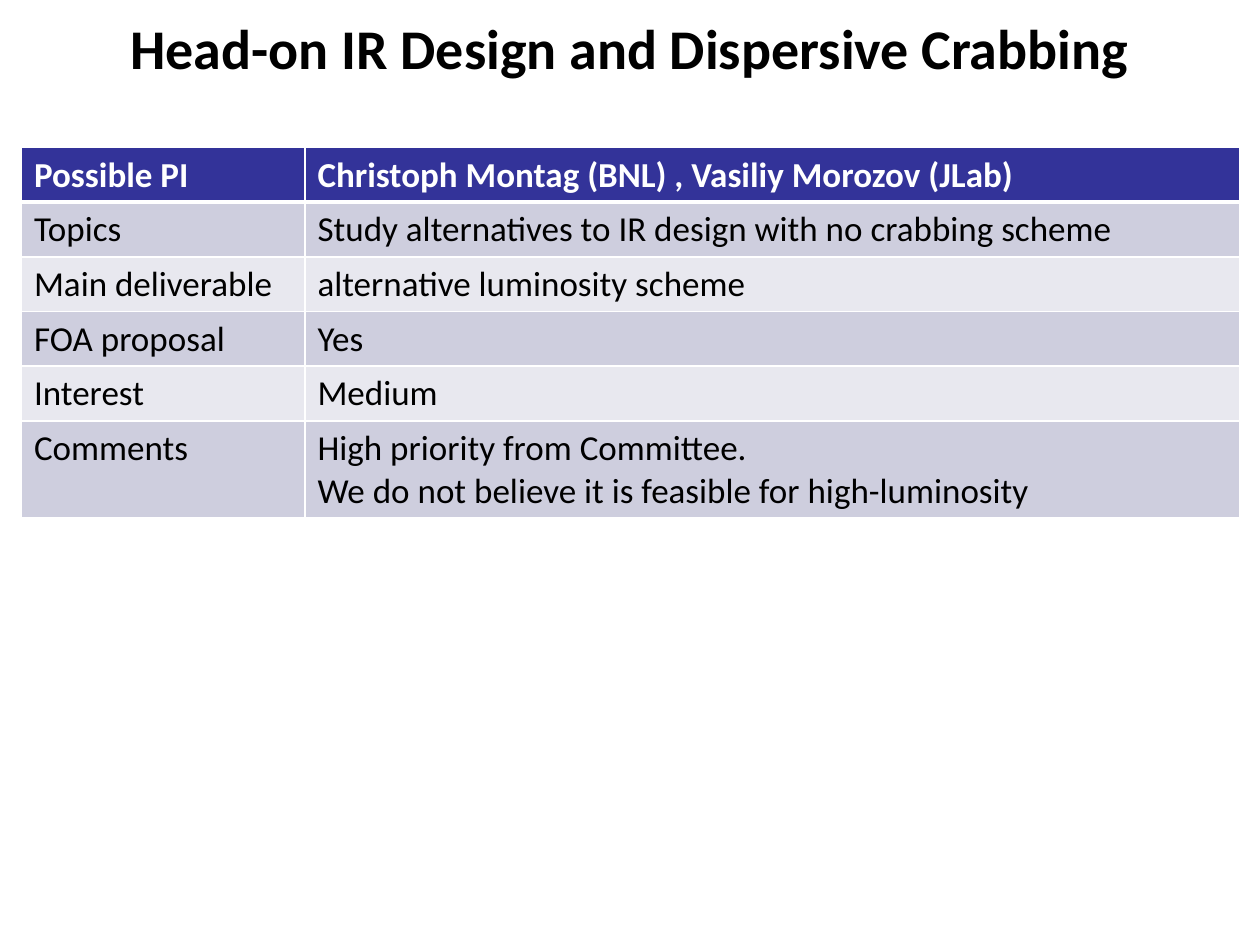
from lxml import etree
from pptx import Presentation
from pptx.dml.color import RGBColor
from pptx.enum.text import MSO_ANCHOR, PP_ALIGN
from pptx.oxml.ns import qn
from pptx.util import Inches, Pt

CENTER, LEFT = PP_ALIGN.CENTER, PP_ALIGN.LEFT
MIDDLE = MSO_ANCHOR.MIDDLE

COLORS = {
    "white": "FFFFFF",
    "black": "000000",
    "header": "333399",
    "odd": "CECEDE",
    "even": "E8E8EF",
}

PROPOSAL_ROWS = [
    ("Possible PI", ["Christoph Montag (BNL) , Vasiliy Morozov (JLab)"]),
    ("Topics", ["Study alternatives to IR design with no crabbing scheme"]),
    ("Main deliverable", ["alternative luminosity scheme"]),
    ("FOA proposal", ["Yes"]),
    ("Interest", ["Medium"]),
    ("Comments", ["High priority from Committee.",
                  "We do not believe it is feasible for high-luminosity"]),
]


class SlideBuilder:
    """Holds the style and the current slide, and draws its elements."""

    font = "Calibri"

    def __init__(self, prs):
        self.s = prs.slides.add_slide(prs.slide_layouts[6])

    def add_lines(self, tf, lines, size, color, bold=False, align=LEFT):
        for i, line in enumerate(lines):
            p = tf.paragraphs[0] if i == 0 else tf.add_paragraph()
            p.alignment = align
            r = p.add_run()
            r.text = line
            r.font.name = self.font
            r.font.size = Pt(size)
            r.font.bold = bold
            r.font.color.rgb = RGBColor.from_string(COLORS[color])

    def title(self, text, x, y, w, h):
        sp = self.s.shapes.add_textbox(Inches(x), Inches(y), Inches(w), Inches(h))
        tf = sp.text_frame
        tf.word_wrap = True
        tf.vertical_anchor = MIDDLE
        self.add_lines(tf, [text], 32, "black", True, CENTER)

    def border(self, cell, side, width):
        tc_pr = cell._tc.get_or_add_tcPr()
        ln = etree.SubElement(tc_pr, qn("a:ln" + side), w=str(Pt(width)))
        fill = etree.SubElement(ln, qn("a:solidFill"))
        etree.SubElement(fill, qn("a:srgbClr"), val=COLORS["white"])

    def cell(self, cell, lines, row):
        header = row == 0
        widths = {"L": 1, "R": 1, "T": 3 if row == 1 else 1, "B": 3 if header else 1}
        for side, width in widths.items():
            self.border(cell, side, width)
        fill = "header" if header else "odd" if row % 2 else "even"
        cell.fill.solid()
        cell.fill.fore_color.rgb = RGBColor.from_string(COLORS[fill])
        self.add_lines(cell.text_frame, lines, 20, "white" if header else "black", header)

    def table(self, rows, x, y, col_widths, line_height, extra_line):
        heights = [line_height + extra_line * (len(lines) - 1) for _, lines in rows]
        table = self.s.shapes.add_table(
            len(rows), len(col_widths), Inches(x), Inches(y),
            Inches(sum(col_widths)), Inches(sum(heights))).table
        for col, width in zip(table.columns, col_widths):
            col.width = Inches(width)
        for i, (label, lines) in enumerate(rows):
            table.rows[i].height = Inches(heights[i])
            self.cell(table.cell(i, 0), [label], i)
            self.cell(table.cell(i, 1), lines, i)


def main():
    prs = Presentation()
    prs.slide_width, prs.slide_height = Inches(10), Inches(7.5)
    slide = SlideBuilder(prs)
    slide.title("Head-on IR Design and Dispersive Crabbing", 0, 0, 10, 0.75)
    slide.table(PROPOSAL_ROWS, 0.17, 1.17, [2.25, 7.42], 0.43, 0.34)
    prs.save("out.pptx")


if __name__ == "__main__":
    main()
